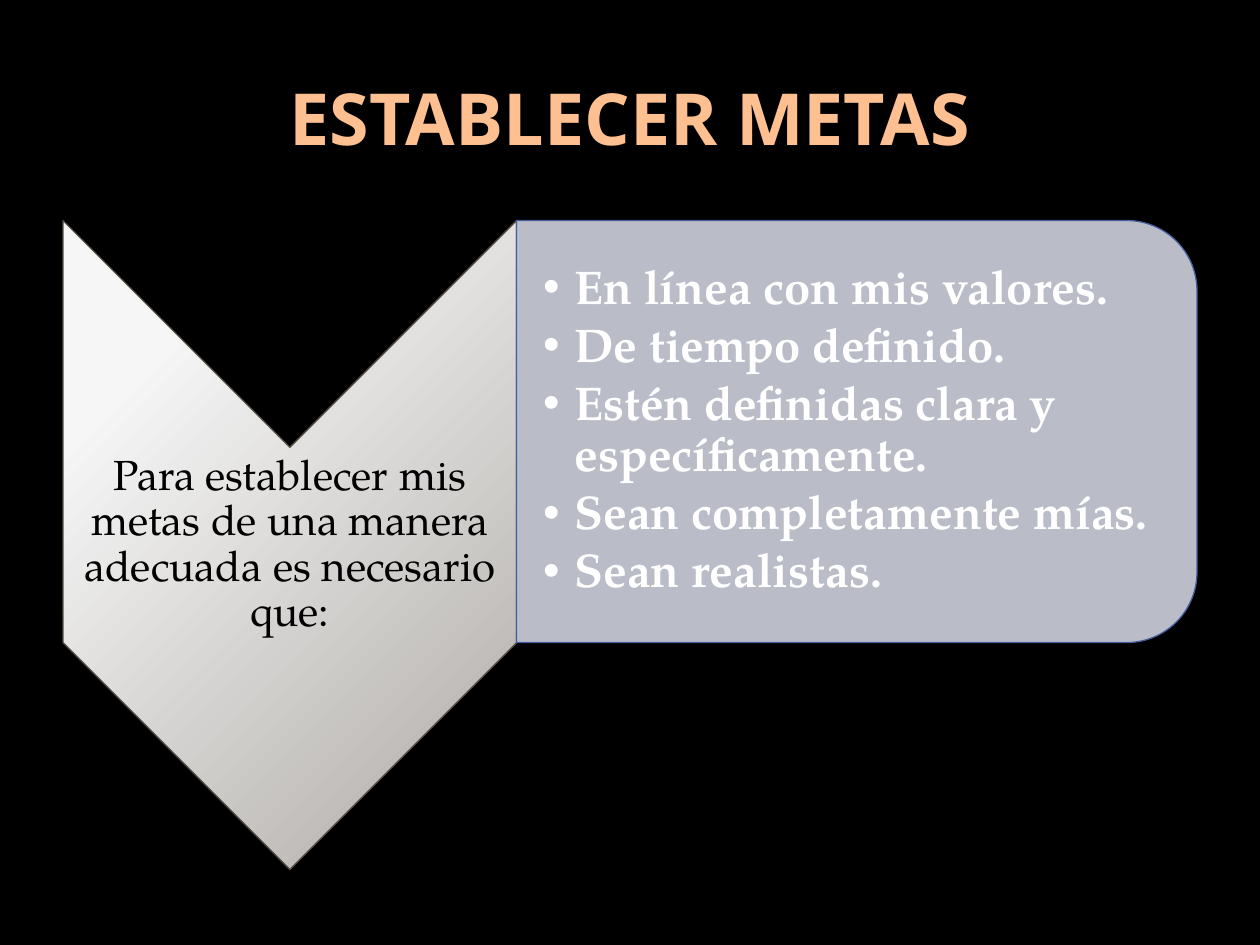
from dataclasses import dataclass

from lxml import etree
from pptx import Presentation
from pptx.dml.color import RGBColor
from pptx.enum.shapes import MSO_SHAPE
from pptx.enum.text import MSO_ANCHOR, MSO_AUTO_SIZE, PP_ALIGN
from pptx.oxml.ns import qn
from pptx.util import Inches, Pt

CHEVRON = MSO_SHAPE.CHEVRON
PANEL = MSO_SHAPE.ROUND_2_SAME_RECTANGLE
MIDDLE = MSO_ANCHOR.MIDDLE
CENTER, LEFT = PP_ALIGN.CENTER, PP_ALIGN.LEFT
FIXED = MSO_AUTO_SIZE.NONE


@dataclass(frozen=True)
class Theme:
    back: str = "000000"
    title: str = "FFC091"
    light: str = "F6F6F6"
    dark: str = "ADA9A5"
    edge: str = "534C42"
    panel: str = "CFD2DE"
    rim: str = "465E9C"
    ink: str = "000000"
    item: str = "FFFFFF"
    head_font: str = "Noto Sans"
    text_font: str = "TeX Gyre Pagella"
    head_size: int = 41
    lead_size: int = 24
    item_size: int = 27


def rgb(code):
    return RGBColor.from_string(code)


class Deck:
    def __init__(self, theme):
        self.theme = theme
        self.prs = Presentation()
        self.prs.slide_width, self.prs.slide_height = Inches(10), Inches(7.5)
        self.slide = self.prs.slides.add_slide(self.prs.slide_layouts[1])
        fill = self.slide.background.fill
        fill.solid()
        fill.fore_color.rgb = rgb(theme.back)

    def place(self, shape, box):
        shape.left, shape.top, shape.width, shape.height = map(Inches, box)

    def letter(self, frame, lines, font, size, color, bold, align):
        """Set the lines as paragraphs of one style."""
        frame.word_wrap, frame.auto_size = True, FIXED
        frame.vertical_anchor = MIDDLE
        frame.text = "\n".join(lines)
        for para in frame.paragraphs:
            para.alignment = align
            para.font.name, para.font.size = font, Pt(size)
            para.font.bold, para.font.color.rgb = bold, rgb(color)

    def inset(self, frame, left=0.02):
        frame.margin_left = Inches(left)
        frame.margin_top = frame.margin_right = frame.margin_bottom = Inches(0.02)

    def title(self, text, box):
        t, shape = self.theme, self.slide.shapes.title
        self.place(shape, box)
        self.letter(shape.text_frame, [text], t.head_font, t.head_size,
                    t.title, True, CENTER)

    def turned(self, kind, box, edge):
        """Add a shape turned a quarter right that fills box as seen."""
        x, y, w, h = box
        shift = (w - h) / 2
        shape = self.slide.shapes.add_shape(
            kind, *map(Inches, (x + shift, y - shift, h, w)))
        shape.rotation = 90
        shape.shadow.inherit = False
        shape.line.color.rgb, shape.line.width = rgb(edge), Pt(0.75)
        return shape

    def arrow(self, box):
        t = self.theme
        fill = self.turned(CHEVRON, box, t.edge).fill
        fill.gradient()
        fill.gradient_angle = 45
        for stop, color, pos in zip(fill.gradient_stops, (t.light, t.dark), (0.2, 1)):
            stop.color.rgb, stop.position = rgb(color), pos

    def panel(self, box):
        shape = self.turned(PANEL, box, self.theme.rim)
        shape.fill.solid()
        shape.fill.fore_color.rgb = rgb(self.theme.panel)
        tint = shape.element.spPr.find(qn("a:solidFill"))[0]
        etree.SubElement(tint, qn("a:alpha")).set("val", "90000")

    def lead(self, text, box):
        t = self.theme
        frame = self.slide.shapes.add_textbox(*map(Inches, box)).text_frame
        self.inset(frame)
        self.letter(frame, [text], t.text_font, t.lead_size, t.ink, False, CENTER)
        frame.paragraphs[0].line_spacing = 0.9

    def items(self, lines, box):
        """Fill the body placeholder and bring it to the front."""
        t, body = self.theme, self.slide.placeholders[1]
        self.place(body, box)
        frame = body.text_frame
        self.inset(frame, 0.21)
        self.letter(frame, lines, t.text_font, t.item_size, t.item, True, LEFT)
        for para in frame.paragraphs:
            para.line_spacing = 0.9
            para.space_before, para.space_after = Pt(0), Pt(4)
            props = para._p.get_or_add_pPr()
            props.set("marL", str(Inches(0.25)))
            props.set("indent", str(Inches(-0.25)))
        body.element.getparent().append(body.element)


def main():
    deck = Deck(Theme())
    deck.title("ESTABLECER METAS", (0.5, 0.3, 9, 1.25))
    deck.arrow((0.5, 1.75, 3.6, 5.15))
    deck.lead("Para establecer mis metas de una manera adecuada es necesario que:",
              (0.5, 3.55, 3.6, 1.55))
    deck.panel((4.1, 1.75, 5.4, 3.35))
    deck.items([
        "En línea con mis valores.",
        "De tiempo definido.",
        "Estén definidas clara y específicamente.",
        "Sean completamente mías.",
        "Sean realistas.",
    ], (4.1, 1.91, 5.24, 3.02))
    deck.prs.save("out.pptx")


if __name__ == "__main__":
    main()
